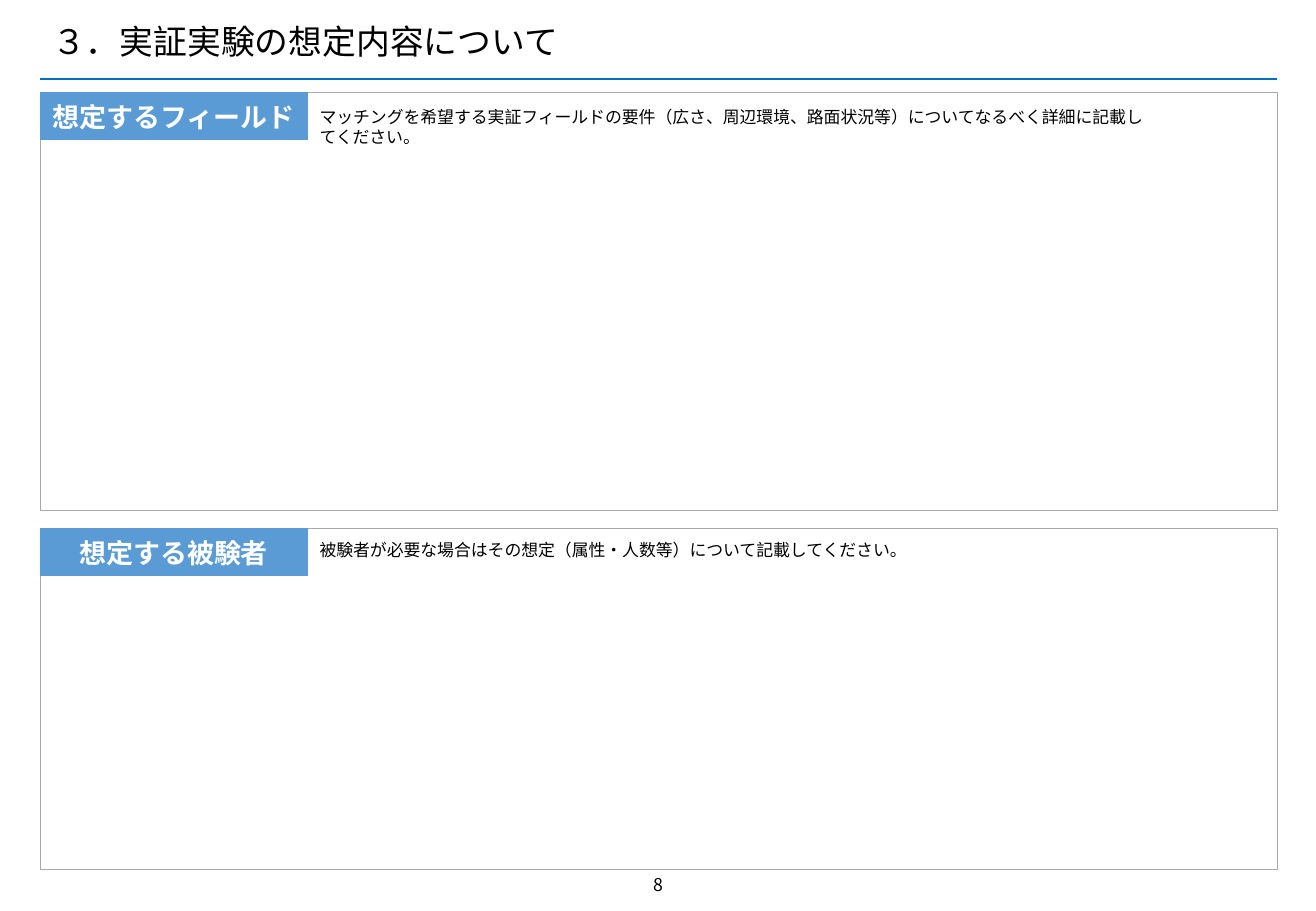
import dataclasses

import lxml.etree
import pptx
import pptx.dml.color
import pptx.enum.shapes
import pptx.enum.text
import pptx.oxml.ns
import pptx.util

Cm = pptx.util.Cm
Pt = pptx.util.Pt
ALIGN = pptx.enum.text.PP_ALIGN
ANCHOR = pptx.enum.text.MSO_ANCHOR
RECT = pptx.enum.shapes.MSO_SHAPE.RECTANGLE


@dataclasses.dataclass(frozen=True)
class Theme:
    """Fonts, colours and type sizes of the slide."""
    font: str = "Noto Sans CJK JP"
    text: str = "000000"
    white: str = "FFFFFF"
    rule: str = "0070C0"
    border: str = "A7A8AA"
    label: str = "5B9BD5"
    title_size: float = 20
    label_size: float = 16
    note_size: float = 10
    number_size: float = 10.5


THEME = Theme()


def rgb(code):
    """Turn a hex code into a colour."""
    return pptx.dml.color.RGBColor.from_string(code)


def write(tf, text, size, color=THEME.text, bold=False, align=ALIGN.LEFT):
    """Write one run into a text frame and return its paragraph."""
    tf.word_wrap = True
    p = tf.paragraphs[0]
    p.alignment = align
    r = p.add_run()
    r.text = text
    r.font.size = Pt(size)
    r.font.bold = bold
    r.font.name = THEME.font
    r.font.color.rgb = rgb(color)
    ea = lxml.etree.SubElement(r.font._element, pptx.oxml.ns.qn("a:ea"))
    ea.set("typeface", THEME.font)
    return p


def add_text(s, box, text, size, **style):
    """Add a text box and return its frame and paragraph."""
    tf = s.shapes.add_textbox(*map(Cm, box)).text_frame
    return tf, write(tf, text, size, **style)


def add_rect(s, box, fill, line):
    """Add a flat rectangle with a thin outline."""
    sp = s.shapes.add_shape(RECT, *map(Cm, box))
    sp.shadow.inherit = False
    sp.fill.solid()
    sp.fill.fore_color.rgb = rgb(fill)
    sp.line.color.rgb = rgb(line)
    sp.line.width = Pt(0.5)
    return sp


def add_header(s, box, title):
    """Place the title in the box with a rule along its bottom edge."""
    x, y, w, h = box
    tf, p = add_text(s, (x, y, 23.72, 1.07), title, THEME.title_size)
    tf.vertical_anchor = ANCHOR.MIDDLE
    p.line_spacing = 0.9
    rule = s.shapes.add_connector(
        pptx.enum.shapes.MSO_CONNECTOR.STRAIGHT,
        Cm(x), Cm(y + h), Cm(x + w), Cm(y + h))
    rule.line.color.rgb = rgb(THEME.rule)
    rule.line.width = Pt(1)
    lxml.etree.SubElement(rule._element.spPr, pptx.oxml.ns.qn("a:effectLst"))


def add_section(s, box, label, note, note_drop):
    """Place a framed entry area with a corner label and a note beside it."""
    x, y, w, h = box
    label_w, label_h = 5.59, 0.99
    add_rect(s, box, THEME.white, THEME.border)
    sp = add_rect(s, (x, y, label_w, label_h), THEME.label, THEME.label)
    tf = sp.text_frame
    tf.margin_left = tf.margin_right = Cm(0.2)
    tf.margin_top = tf.margin_bottom = Cm(0.2)
    tf.vertical_anchor = ANCHOR.MIDDLE
    p = write(tf, label, THEME.label_size, THEME.white, True, ALIGN.CENTER)
    p.line_spacing = 1.06
    p.space_before = Pt(6)
    add_text(s, (x + label_w, y + note_drop, 17.96, 0.69), note, THEME.note_size)


def add_page_number(s, box, number):
    """Place the centred page number."""
    add_text(s, box, number, THEME.number_size, align=ALIGN.CENTER)


def main():
    """Build the slide and save it."""
    prs = pptx.Presentation()
    prs.slide_width, prs.slide_height = Cm(27.51), Cm(19.05)
    s = prs.slides.add_slide(prs.slide_layouts[6])
    left, width = 0.84, 25.86
    add_header(s, (left, 0.38, width, 1.27), "３．実証実験の想定内容について")
    add_section(
        s, (left, 1.93, width, 8.74), "想定するフィールド",
        "マッチングを希望する実証フィールドの要件（広さ、周辺環境、路面状況等）"
        "についてなるべく詳細に記載してください。", 0.18)
    add_section(
        s, (left, 11.05, width, 7.14), "想定する被験者",
        "被験者が必要な場合はその想定（属性・人数等）について記載してください。", 0.1)
    add_page_number(s, (12.67, 18.14, 2.18, 0.74), "8")
    prs.save("out.pptx")


if __name__ == "__main__":
    main()
